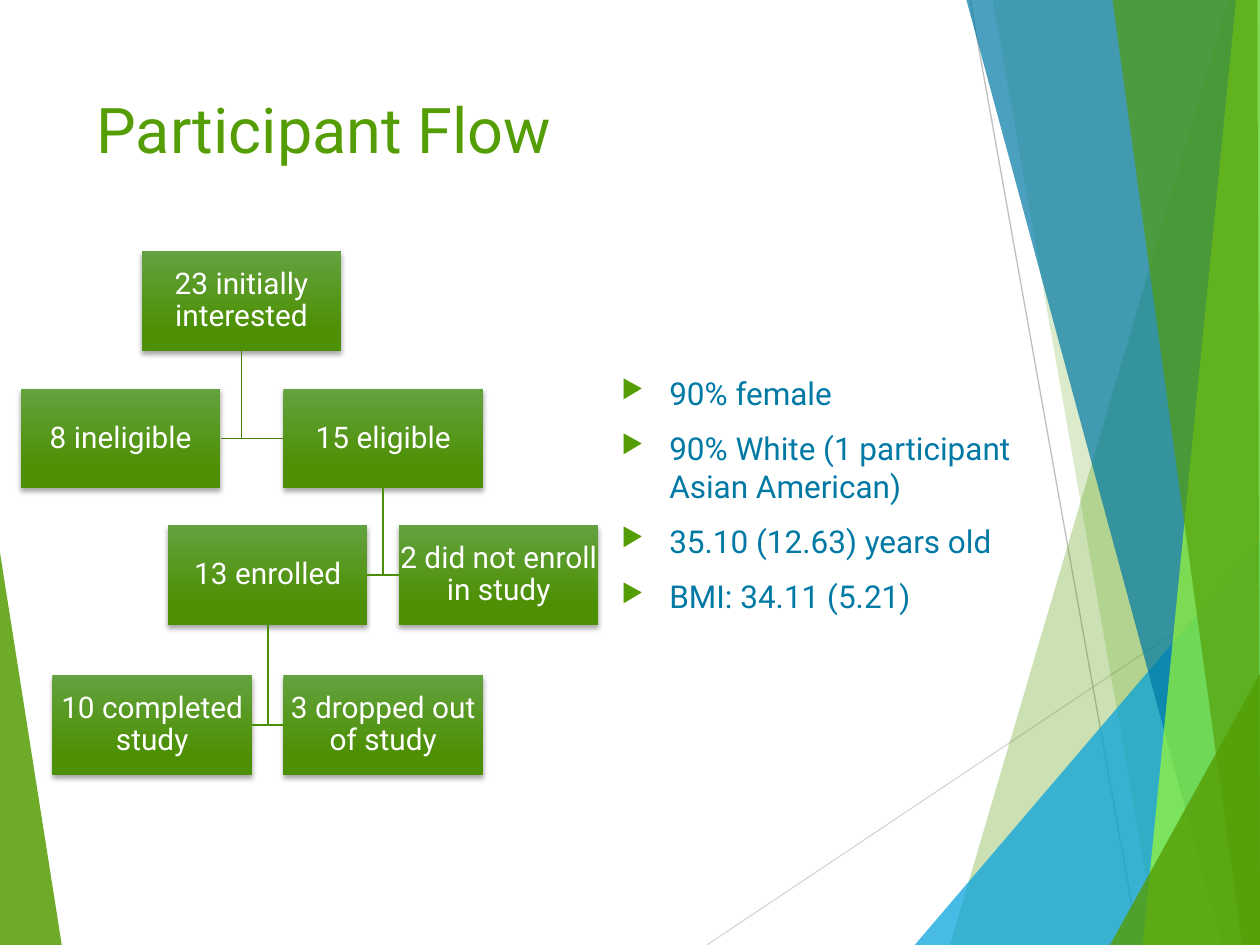
import lxml.etree
import pptx
import pptx.dml.color
import pptx.enum.dml
import pptx.enum.shapes
import pptx.enum.text
import pptx.oxml
import pptx.oxml.ns
import pptx.util

COLORS = {
    "green": "549D04", "lime": "9BFA33", "sky": "00A1DC", "blue": "0079A5",
    "box_top": "63A23F", "box_bottom": "4D9004", "link": "4C8E04", "top_link": "437E03",
    "white": "FFFFFF", "pale_gray": "D9D9D9", "gray": "BFBFBF", "shadow": "000000",
}
FONT = "Roboto"
CELL = pptx.util.Inches(1) / 12  # the slide is a grid of 120 columns and 90 rows
COLUMNS, ROWS = 120, 90
BOX_WIDTH, BOX_HEIGHT = 19, 9.5

# Outline in percent of the slide's width and height, colour, opacity in percent
SHARDS = [
    ([(0, 58.5), (4.9, 100), (0, 100)], "green", 85),
    ([(97.5, 0), (75.4, 100), (100, 100), (100, 0)], "green", 30),
    ([(78.8, 0), (91.9, 100), (100, 100), (100, 0)], "green", 20),
    ([(72.6, 100), (100, 57.2), (100, 100)], "sky", 72),
    ([(76.7, 0), (97, 100), (100, 100), (100, 0)], "blue", 70),
    ([(98.1, 0), (90.7, 100), (100, 100), (100, 0)], "lime", 70),
    ([(88.3, 0), (98.6, 100), (100, 100), (99.8, 0)], "green", 65),
    ([(88.1, 100), (100, 71.3), (100, 100)], "green", 80),
]
RAYS = [((56.1, 100), (100, 60.9), "pale_gray"), ((77, 0), (90.4, 100), "gray")]

# Column and row of each box inside the flow chart
FLOW_BOXES = {
    "23 initially interested": (11.5, 0),
    "8 ineligible": (0, 13.1),
    "15 eligible": (25, 13.1),
    "13 enrolled": (14, 26.1),
    "2 did not enroll in study": (36, 26.1),
    "10 completed study": (3, 40.4),
    "3 dropped out of study": (25, 40.4),
}
FLOW_SPLITS = [
    ("23 initially interested", "8 ineligible", "15 eligible", "top_link"),
    ("15 eligible", "13 enrolled", "2 did not enroll in study", "link"),
    ("13 enrolled", "10 completed study", "3 dropped out of study", "link"),
]
FINDINGS = [
    "90% female",
    "90% White (1 participant Asian American)",
    "35.10 (12.63) years old",
    "BMI: 34.11 (5.21)",
]


def rgb(name):
    return pptx.dml.color.RGBColor.from_string(COLORS[name])


def cells(*counts):
    return [round(count * CELL) for count in counts]


def add_xml(parent, markup):
    namespace = pptx.oxml.ns.nsdecls("a")
    parent.append(pptx.oxml.parse_xml(markup.replace(">", f" {namespace}>", 1)))


def write_text(frame, paragraphs, size, color, align="LEFT", anchor="TOP", margin=None,
               line_spacing=None, space_before=0, bullet_color=None):
    frame.word_wrap = True
    frame.auto_size = pptx.enum.text.MSO_AUTO_SIZE.NONE
    frame.vertical_anchor = getattr(pptx.enum.text.MSO_ANCHOR, anchor)
    if margin is not None:
        frame.margin_left = frame.margin_right = pptx.util.Inches(margin)
        frame.margin_top = frame.margin_bottom = pptx.util.Inches(margin)
    for index, text in enumerate(paragraphs):
        paragraph = frame.add_paragraph() if index else frame.paragraphs[0]
        paragraph.alignment = getattr(pptx.enum.text.PP_ALIGN, align)
        paragraph.line_spacing = line_spacing
        paragraph.space_before = pptx.util.Pt(space_before)
        run = paragraph.add_run()
        run.text = text
        run.font.name = FONT
        run.font.size = pptx.util.Pt(size)
        run.font.color.rgb = rgb(color)
        if bullet_color:
            add_bullet(paragraph, bullet_color)


def add_bullet(paragraph, color):
    properties = paragraph._p.get_or_add_pPr()
    indent = pptx.util.Inches(0.38)
    properties.set("marL", str(indent))
    properties.set("indent", str(-indent))
    add_xml(properties, f'<a:buClr><a:srgbClr val="{COLORS[color]}"/></a:buClr>')
    add_xml(properties, '<a:buSzPct val="80000"></a:buSzPct>')
    add_xml(properties, '<a:buChar char="▶"></a:buChar>')


def add_line(slide, begin, end, color, width):
    line = slide.shapes.add_connector(pptx.enum.shapes.MSO_CONNECTOR.STRAIGHT, *begin, *end)
    line.line.color.rgb = rgb(color)
    line.line.width = pptx.util.Pt(width)
    add_xml(line._element.spPr, "<a:effectLst></a:effectLst>")
    return line


def add_backdrop(slide, left, top, width, height):
    def place(point):
        return round(left + point[0] / 100 * width), round(top + point[1] / 100 * height)

    for begin, end, color in RAYS:
        add_line(slide, place(begin), place(end), color, 0.75)
    for outline, color, opacity in SHARDS:
        first, *others = map(place, outline)
        builder = slide.shapes.build_freeform(*first)
        builder.add_line_segments(others, close=True)
        shard = builder.convert_to_shape()
        shard.shadow.inherit = False
        shard.line.fill.background()
        shard.fill.solid()
        shard.fill.fore_color.rgb = rgb(color)
        fill_color = shard._element.spPr.find(".//" + pptx.oxml.ns.qn("a:srgbClr"))
        add_xml(fill_color, f'<a:alpha val="{opacity * 1000}"></a:alpha>')


def add_title(slide, left, top, width, height):
    title = slide.shapes.title
    title.left, title.top, title.width, title.height = left, top, width, height
    write_text(title.text_frame, ["Participant Flow"], 36, "green")


def add_flow_box(slide, text, left, top, width, height):
    box = slide.shapes.add_shape(pptx.enum.shapes.MSO_SHAPE.RECTANGLE, left, top, width, height)
    box.line.fill.background()
    box.fill.gradient()
    box.fill.gradient_angle = 270
    stops = zip(box.fill.gradient_stops, (0, 0.78), ("box_top", "box_bottom"))
    for stop, position, color in stops:
        stop.position = position
        stop.color.rgb = rgb(color)
    add_xml(box._element.spPr, (
        f'<a:effectLst><a:outerShdw blurRad="{pptx.util.Pt(3)}" dist="{pptx.util.Pt(2)}" '
        f'dir="5400000" rotWithShape="0"><a:srgbClr val="{COLORS["shadow"]}">'
        '<a:alpha val="35000"/></a:srgbClr></a:outerShdw></a:effectLst>'))
    write_text(box.text_frame, [text], 17, "white", align="CENTER", anchor="MIDDLE",
               margin=0.01, line_spacing=0.9)
    return box


def add_flow_chart(slide, left, top):
    """Draw the boxes, then a stem and a crossbar for every split."""
    size = cells(BOX_WIDTH, BOX_HEIGHT)
    boxes = {}
    for text, position in FLOW_BOXES.items():
        column, row = cells(*position)
        boxes[text] = add_flow_box(slide, text, left + column, top + row, *size)
    for parent_text, left_text, right_text, color in FLOW_SPLITS:
        parent, left_child, right_child = boxes[parent_text], boxes[left_text], boxes[right_text]
        center = parent.left + parent.width // 2
        middle = left_child.top + left_child.height // 2
        stem = add_line(slide, (center, parent.top + parent.height), (center, middle), color, 1)
        stem.begin_connect(parent, 2)
        crossbar = add_line(slide, (left_child.left + left_child.width, middle),
                            (right_child.left, middle), color, 1)
        crossbar.begin_connect(left_child, 3)
        crossbar.end_connect(right_child, 1)


def add_findings(slide, left, top, width, height):
    box = slide.shapes.add_textbox(left, top, width, height)
    write_text(box.text_frame, FINDINGS, 18, "blue", space_before=10, bullet_color="green")


def main():
    presentation = pptx.Presentation()
    presentation.slide_width, presentation.slide_height = cells(COLUMNS, ROWS)
    slide = presentation.slides.add_slide(presentation.slide_layouts[5])
    add_backdrop(slide, *cells(0, 0, COLUMNS, ROWS))
    add_title(slide, *cells(8, 8, 83.3, 17.3))
    add_flow_chart(slide, *cells(2, 23.9))
    add_findings(slide, *cells(58, 35, 44, 26))
    presentation.save("out.pptx")


if __name__ == "__main__":
    main()
